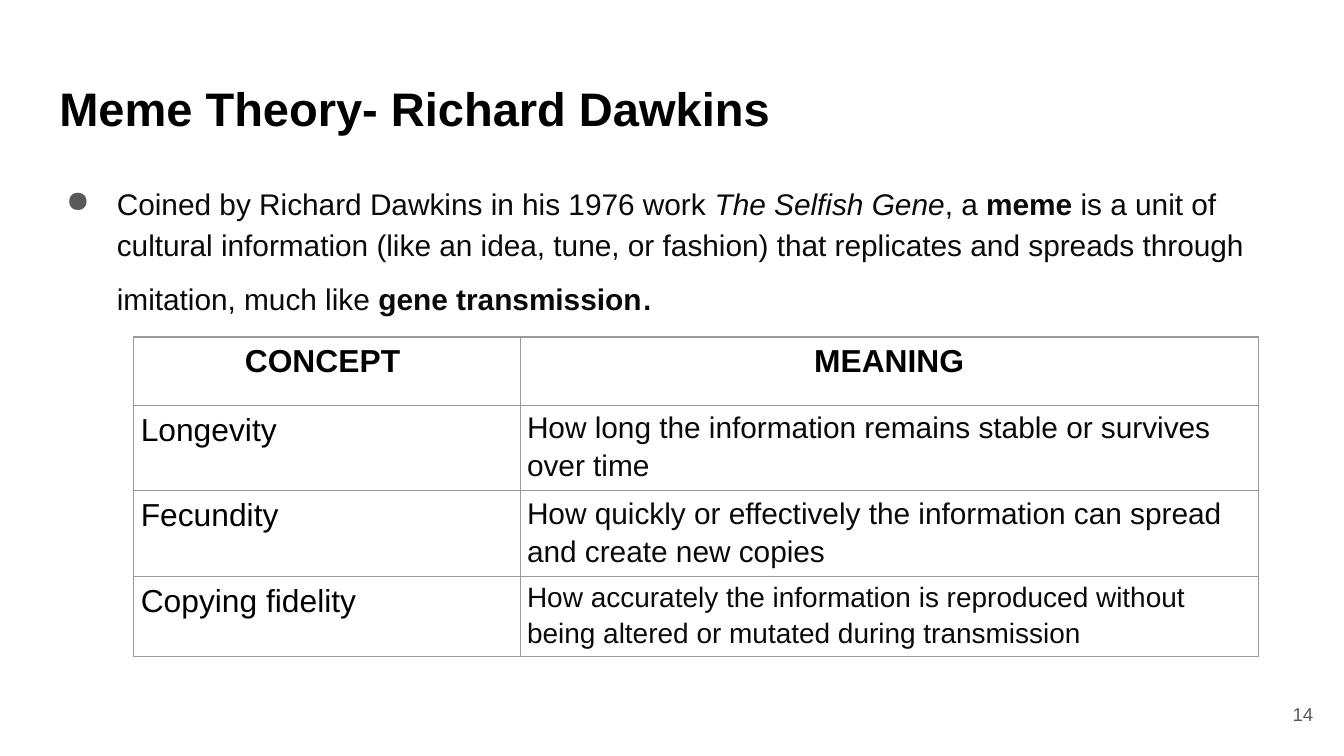
"""Build the slide on Meme Theory with its table of concepts."""
from dataclasses import dataclass

from lxml.etree import SubElement
from pptx import Presentation
from pptx.dml.color import RGBColor
from pptx.enum.text import MSO_ANCHOR, PP_ALIGN
from pptx.oxml.ns import qn
from pptx.util import Cm, Pt

FONT = "Arial"
BLACK = RGBColor(0x00, 0x00, 0x00)
INK = RGBColor(0x0A, 0x0A, 0x0A)
GRAY = RGBColor(0x59, 0x59, 0x59)
BORDER = RGBColor(0x9A, 0x9A, 0x9A)
WHITE = RGBColor(0xFF, 0xFF, 0xFF)
LINE_SPACING = 1.15


@dataclass
class Row:
    concept: str
    meaning: str
    height: float
    size: float = 16
    color: RGBColor = INK
    header: bool = False


ROWS = [
    Row("CONCEPT ", "MEANING", 1.29, 17, BLACK, True),
    Row("Longevity", "How long the information remains stable or survives over time", 1.5),
    Row("Fecundity", "How quickly or effectively the information can spread and create new copies", 1.5),
    Row("Copying fidelity", "How accurately the information is reproduced without being altered "
        "or mutated during transmission", 1.45, 15),
]
COLUMN_WIDTHS = (7.3, 13.95)


def add_text(p, text: str, *, size: float = 16, color: RGBColor = INK,
             bold: bool = False, italic: bool = False) -> None:
    r = p.add_run()
    r.text = text
    r.font.name = FONT
    r.font.size = Pt(size)
    r.font.bold = bold
    r.font.italic = italic
    r.font.color.rgb = color


def setup_frame(tf, anchor: MSO_ANCHOR = MSO_ANCHOR.TOP) -> None:
    tf.word_wrap = True
    tf.vertical_anchor = anchor
    tf.margin_left = tf.margin_right = tf.margin_top = tf.margin_bottom = Cm(0.25)


def add_bullet(p, color: RGBColor) -> None:
    pPr = p._p.get_or_add_pPr()
    pPr.set("marL", str(Cm(1.27)))
    pPr.set("indent", str(-Cm(0.96)))
    SubElement(SubElement(pPr, qn("a:buClr")), qn("a:srgbClr"), val=str(color))
    SubElement(pPr, qn("a:buChar"), char="●")


def add_borders(cell, color: RGBColor) -> None:
    tcPr = cell._tc.get_or_add_tcPr()
    for side in ("a:lnL", "a:lnR", "a:lnT", "a:lnB"):
        ln = SubElement(tcPr, qn(side), w=str(Pt(0.75)))
        SubElement(SubElement(ln, qn("a:solidFill")), qn("a:srgbClr"), val=str(color))


def fill_cell(cell, text: str, *, size: float, color: RGBColor, header: bool) -> None:
    cell.margin_left = cell.margin_right = Cm(0.13)
    cell.margin_top = cell.margin_bottom = Cm(0.03)
    add_borders(cell, BORDER)
    cell.fill.background()
    p = cell.text_frame.paragraphs[0]
    p.alignment = PP_ALIGN.CENTER if header else PP_ALIGN.LEFT
    p.line_spacing = LINE_SPACING
    add_text(p, text, size=size, color=color, bold=header)


def add_title(s) -> None:
    sp = s.shapes.title
    sp.left, sp.top, sp.width, sp.height = Cm(0.87), Cm(1.24), Cm(23.67), Cm(1.6)
    setup_frame(sp.text_frame, MSO_ANCHOR.MIDDLE)
    p = sp.text_frame.paragraphs[0]
    p.alignment = PP_ALIGN.LEFT
    add_text(p, "Meme Theory- Richard Dawkins", size=25.2, color=BLACK, bold=True)


def add_body(s) -> None:
    sp = s.shapes.add_textbox(Cm(0.69), Cm(3.15), Cm(23.67), Cm(9.5))
    sp.line.color.rgb = WHITE
    sp.line.width = Pt(0.75)
    setup_frame(sp.text_frame)
    p = sp.text_frame.paragraphs[0]
    p.line_spacing = LINE_SPACING
    add_bullet(p, GRAY)
    add_text(p, "Coined by Richard Dawkins in his 1976 work ")
    add_text(p, "The Selfish Gene", italic=True)
    add_text(p, ", a ")
    add_text(p, "meme", bold=True)
    add_text(p, " is a unit of cultural information (like an idea, tune, or fashion) "
             "that replicates and spreads through imitation, much like ")
    add_text(p, "gene transmission", bold=True)
    add_text(p, ".", size=22, color=BLACK)


def add_concepts(s) -> None:
    table = s.shapes.add_table(len(ROWS), len(COLUMN_WIDTHS), Cm(2.53), Cm(6.37),
                               Cm(sum(COLUMN_WIDTHS)), Cm(sum(r.height for r in ROWS))).table
    table.first_row = table.horz_banding = False
    for column, width in zip(table.columns, COLUMN_WIDTHS):
        column.width = Cm(width)
    for i, row in enumerate(ROWS):
        table.rows[i].height = Cm(row.height)
        fill_cell(table.cell(i, 0), row.concept, size=17, color=BLACK, header=row.header)
        fill_cell(table.cell(i, 1), row.meaning, size=row.size, color=row.color, header=row.header)


def add_page_number(s) -> None:
    tf = s.shapes.add_textbox(Cm(23.55), Cm(12.95), Cm(1.52), Cm(1.09)).text_frame
    setup_frame(tf, MSO_ANCHOR.MIDDLE)
    p = tf.paragraphs[0]
    p.alignment = PP_ALIGN.RIGHT
    add_text(p, "14", size=10, color=GRAY)


def main() -> None:
    prs = Presentation()
    prs.slide_width, prs.slide_height = Cm(25.4), Cm(14.29)
    s = prs.slides.add_slide(prs.slide_layouts[5])
    add_title(s)
    add_body(s)
    add_concepts(s)
    add_page_number(s)
    prs.save("out.pptx")


if __name__ == "__main__":
    main()
